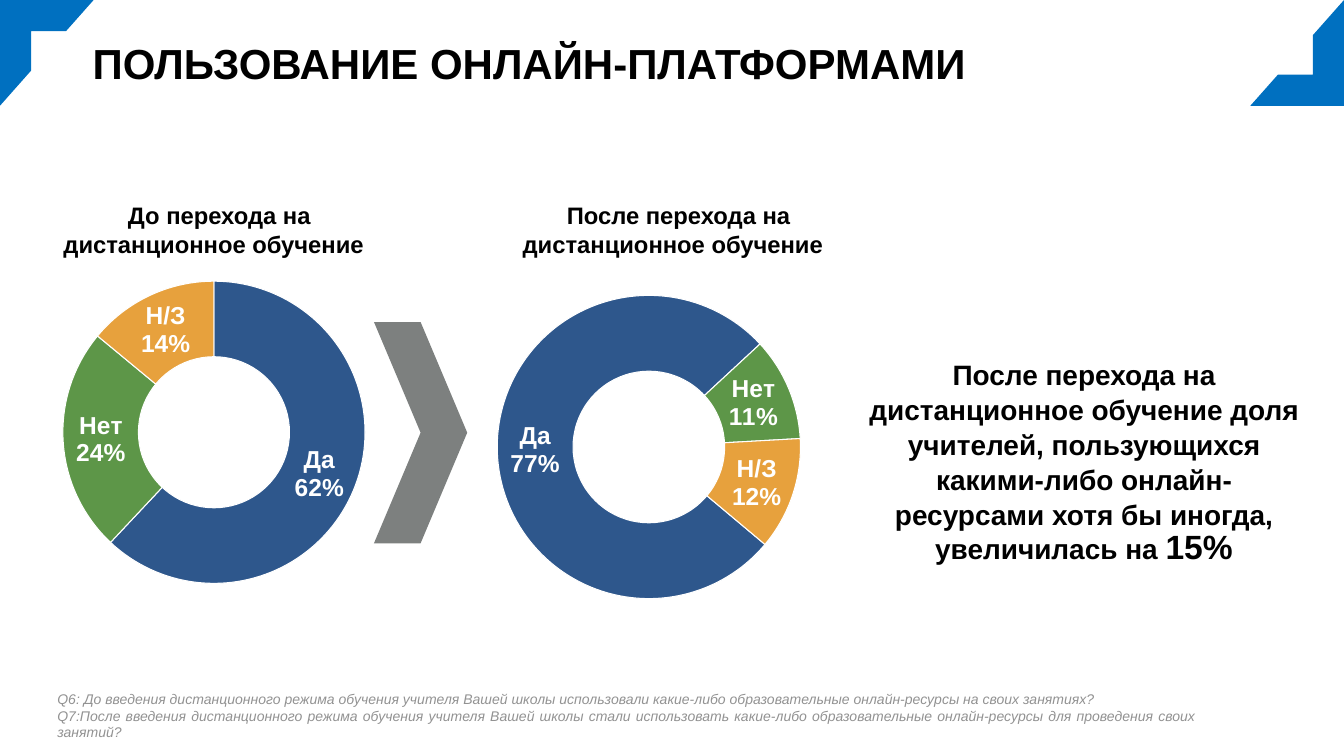
from lxml import etree
from pptx import Presentation
from pptx.chart.data import CategoryChartData as Data
from pptx.dml.color import RGBColor
from pptx.enum.chart import XL_CHART_TYPE as Kind
from pptx.enum.shapes import MSO_SHAPE as Form
from pptx.enum.text import MSO_ANCHOR as Anchor, MSO_AUTO_SIZE as Fit, PP_ALIGN as Align
from pptx.oxml import parse_xml
from pptx.oxml.ns import nsdecls, qn
from pptx.util import Cm, Pt


def color(code):
    return RGBColor.from_string(code)


def paint(fill, code):
    fill.solid()
    fill.fore_color.rgb = color(code)


def place(shape, box):
    shape.left, shape.top, shape.width, shape.height = map(Cm, box)


def write(frame, paras, size=40, bold=False, italic=False, code="000000",
          face="Arial", align=Align.LEFT, pitch=None, indent=0):
    frame.word_wrap = True
    frame.auto_size = Fit.NONE
    frame.vertical_anchor = Anchor.MIDDLE
    frame.margin_left = frame.margin_right = Cm(0.15)
    frame.margin_top = frame.margin_bottom = Cm(0.15)
    for num, runs in enumerate(paras):
        para = frame.paragraphs[0] if num == 0 else frame.add_paragraph()
        props = para._p.get_or_add_pPr()
        props.set("marL", "0")
        props.set("indent", str(Cm(indent)))
        etree.SubElement(props, qn("a:buNone"))
        para.alignment = align
        para.space_before = Pt(0)
        if pitch:
            para.line_spacing = Pt(pitch)
        for text, large in runs:
            run = para.add_run()
            run.text = text
            font = run.font
            font.name, font.size = face, Pt(large or size)
            font.bold, font.italic = bold, italic
            font.color.rgb = color(code)


class Deck:
    face = "Arial"
    blue = "0070C0"
    gray = "7D807F"
    note = "929292"
    hues = ("2E578C", "5D9648", "E7A13D")
    names = ("Да", "Нет", "Н/З")

    def __init__(self, wide, high):
        self.file = Presentation()
        self.file.slide_width, self.file.slide_height = Cm(wide), Cm(high)
        self.slide = self.file.slides.add_slide(self.file.slide_layouts[1])

    def shape(self, form, box, code, turn=0):
        item = self.slide.shapes.add_shape(form, *map(Cm, box))
        item.shadow.inherit = False
        paint(item.fill, code)
        item.line.fill.background()
        item.rotation = turn

    def holder(self, index, box, paras, **style):
        item = self.slide.placeholders[index]
        place(item, box)
        write(item.text_frame, paras, face=self.face, **style)

    def label(self, box, paras, **style):
        item = self.slide.shapes.add_textbox(*map(Cm, box))
        write(item.text_frame, paras, face=self.face, **style)

    def ring(self, box, values, plot_high, start=0):
        data = Data()
        data.categories = self.names
        data.add_series("Series 1", values)
        chart = self.slide.shapes.add_chart(
            Kind.DOUGHNUT, *map(Cm, box), data).chart
        chart.has_title = chart.has_legend = False
        chart.font.name, chart.font.size = self.face, Pt(10)
        plot = chart.plots[0]
        plot.vary_by_categories = False
        series = plot.series[0]
        paint(series.format.fill, self.hues[0])
        for num, code in enumerate(self.hues):
            look = series.points[num].format
            paint(look.fill, code)
            look.line.color.rgb = color("FFFFFF")
            look.line.width = Pt(1.5)
        self.tags(series.data_labels)
        area = chart._chartSpace.find(".//" + qn("c:plotArea"))
        area.find(".//" + qn("c:firstSliceAng")).set("val", str(start))
        for old in area.findall(qn("c:layout")):
            area.remove(old)
        sizes = zip("xywh", (0.005, 0.005, 0.99, plot_high))
        area.insert(0, parse_xml(
            f'<c:layout {nsdecls("c")}><c:manualLayout>'
            '<c:layoutTarget val="inner"/>'
            '<c:xMode val="edge"/><c:yMode val="edge"/>'
            + "".join(f'<c:{key} val="{val}"/>' for key, val in sizes)
            + "</c:manualLayout></c:layout>"))

    def tags(self, tags):
        tags.show_category_name = tags.show_percentage = True
        tags.show_value = False
        tags.number_format, tags.number_format_is_linked = "0%", False
        font = tags.font
        font.name, font.size, font.bold = self.face, Pt(35), True
        font.color.rgb = color("FFFFFF")
        root = tags._element
        gap = etree.Element(qn("c:separator"))
        gap.text = "\n"
        root.find(qn("c:showBubbleSize")).addnext(gap)

    def save(self):
        self.file.save("out.pptx")


def main():
    deck = Deck(67.74, 38.1)
    deck.shape(Form.HALF_FRAME, (0, 0, 4.72, 5.33), deck.blue)
    deck.shape(Form.HALF_FRAME, (63.02, 0, 4.72, 5.33), deck.blue, turn=180)
    deck.holder(0, (4.52, 0, 58.34, 6.35),
                [[("ПОЛЬЗОВАНИЕ ОНЛАЙН-ПЛАТФОРМАМИ", None)]], size=60, bold=True)

    deck.ring((3.05, 14.07, 15.47, 20.12), (62, 24, 14), 0.757)
    deck.ring((24.97, 14.81, 15.47, 15.47), (77, 11, 12), 0.988, start=130)
    for left, wide, word in ((2.74, 16.05, "До"), (25.68, 16.46, "После")):
        deck.label((left, 9.96, wide, 3.2),
                   [[(f"{word} перехода на дистанционное обучение", None)]],
                   size=34, bold=True, align=Align.CENTER, pitch=41, indent=0.58)
    deck.shape(Form.CHEVRON, (18.85, 16.23, 4.7, 11.15), deck.gray)

    deck.holder(1, (43.41, 10.31, 22.45, 25.83),
                [[("После перехода на дистанционное обучение доля учителей, "
                   "пользующихся какими-либо онлайн-ресурсами хотя бы иногда, "
                   "увеличилась на ", None), ("15%", 48)]],
                bold=True, align=Align.CENTER, pitch=50)
    deck.label((2.74, 35.08, 57.68, 1.96),
               [[("Q6: До введения дистанционного режима обучения учителя Вашей "
                  "школы использовали какие-либо образовательные онлайн-ресурсы "
                  "на своих занятиях?", None)],
                [("Q7:После введения дистанционного режима обучения учителя Вашей "
                  "школы стали использовать какие-либо образовательные "
                  "онлайн-ресурсы для проведения своих занятий?", None)]],
               size=20, italic=True, code=deck.note, align=Align.JUSTIFY)
    deck.save()


if __name__ == "__main__":
    main()
